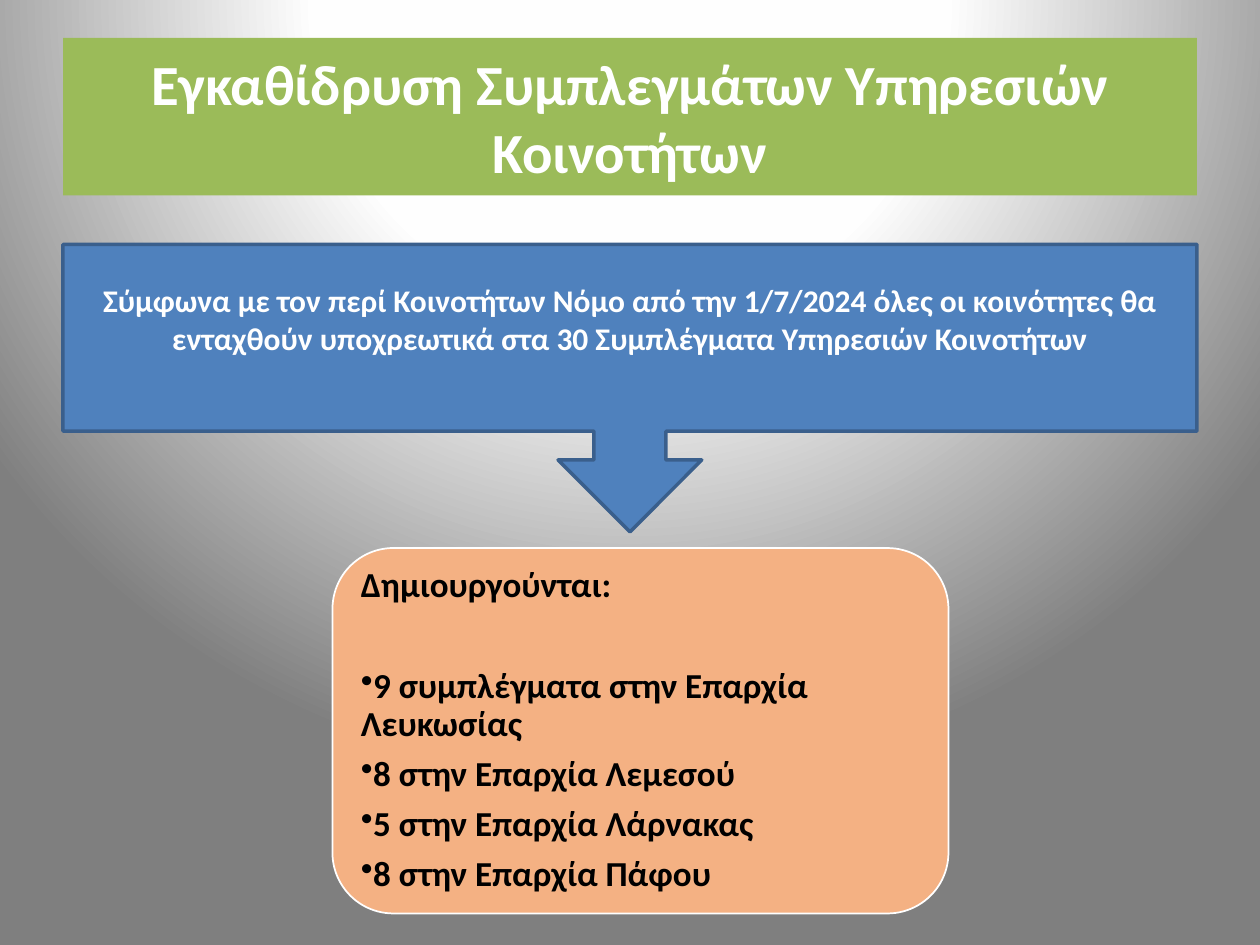
from dataclasses import dataclass

import lxml.etree
import pptx
import pptx.dml.color
import pptx.enum.shapes
import pptx.enum.text
import pptx.oxml
import pptx.oxml.ns
import pptx.util

Pt = pptx.util.Pt
Preset = pptx.enum.shapes.MSO_SHAPE
Align = pptx.enum.text.PP_ALIGN
qn = pptx.oxml.ns.qn

WHITE, BLACK = "FFFFFF", "000000"
GREEN, BLUE, DARK_BLUE, PEACH = "9BBB59", "4F81BD", "3A5F8C", "F4B183"
BACKDROP_STOPS = ((0, WHITE), (40, "FEFEFE"), (100, "7F7F7F"))


@dataclass(frozen=True)
class Panel:
    preset: Preset
    left: float
    top: float
    width: float
    height: float
    fill: str
    line: str
    line_width: float


NOTICE = Panel(Preset.DOWN_ARROW_CALLOUT, 36, 139.7, 648, 164.2, BLUE, DARK_BLUE, 2)
CLUSTERS = Panel(Preset.ROUNDED_RECTANGLE, 190, 313.2, 352, 208.8, PEACH, WHITE, 1)

DISTRICTS = (
    "9 συμπλέγματα στην Επαρχία Λευκωσίας",
    "8 στην Επαρχία Λεμεσού",
    "5 στην Επαρχία Λάρνακας",
    "8 στην Επαρχία Πάφου",
)


def rgb(value: str) -> pptx.dml.color.RGBColor:
    return pptx.dml.color.RGBColor.from_string(value)


def paint_backdrop(slide) -> None:
    """Fill the background with a circular gradient centred above the slide."""
    slide.background.fill.solid()
    solid = slide.element.find(".//" + qn("p:bgPr")).find(qn("a:solidFill"))
    stops = "".join(
        f'<a:gs pos="{percent * 1000}"><a:srgbClr val="{color}"/></a:gs>'
        for percent, color in BACKDROP_STOPS
    )
    gradient = pptx.oxml.parse_xml(
        f'<a:gradFill {pptx.oxml.ns.nsdecls("a")} rotWithShape="1">'
        f'<a:gsLst>{stops}</a:gsLst><a:path path="circle">'
        '<a:fillToRect l="50000" t="-80000" r="50000" b="180000"/>'
        "</a:path></a:gradFill>"
    )
    solid.getparent().replace(solid, gradient)


def add_panel(slide, panel: Panel):
    shape = slide.shapes.add_shape(
        panel.preset, Pt(panel.left), Pt(panel.top), Pt(panel.width), Pt(panel.height)
    )
    shape.shadow.inherit = False
    shape.fill.solid()
    shape.fill.fore_color.rgb = rgb(panel.fill)
    shape.line.color.rgb = rgb(panel.line)
    shape.line.width = Pt(panel.line_width)
    shape.text_frame.word_wrap = True
    return shape


def write(paragraph, text: str, *, size: float, color: str, align=Align.CENTER,
          spacing: float = 1.0, after: float = 0, bullet: str = "") -> None:
    paragraph.alignment = align
    paragraph.line_spacing = spacing
    paragraph.space_before = Pt(0)
    paragraph.space_after = Pt(after)
    if bullet:
        properties = paragraph._p.get_or_add_pPr()
        lxml.etree.SubElement(properties, qn("a:buChar"), char=bullet)
    run = paragraph.add_run()
    run.text = text
    run.font.name = "Calibri"
    run.font.size = Pt(size)
    run.font.bold = True
    run.font.color.rgb = rgb(color)


def add_title(slide) -> None:
    title = slide.shapes.title
    title.left, title.top, title.width, title.height = Pt(36), Pt(21.6), Pt(648), Pt(90)
    title.fill.solid()
    title.fill.fore_color.rgb = rgb(GREEN)
    title.text_frame.auto_size = pptx.enum.text.MSO_AUTO_SIZE.NONE
    title.text_frame.vertical_anchor = pptx.enum.text.MSO_ANCHOR.MIDDLE
    write(title.text_frame.paragraphs[0],
          "Εγκαθίδρυση Συμπλεγμάτων Υπηρεσιών Κοινοτήτων", size=32.4, color=WHITE)


def add_clusters(slide) -> None:
    frame = add_panel(slide, CLUSTERS).text_frame
    frame.margin_left = frame.margin_right = Pt(6)
    frame.margin_top = frame.margin_bottom = Pt(6)
    style = dict(size=20, color=BLACK, align=Align.LEFT, spacing=0.9)
    write(frame.paragraphs[0], "Δημιουργούνται:", after=36, **style)
    for district in DISTRICTS:
        write(frame.add_paragraph(), district, after=7, bullet="•", **style)


def add_notice(slide) -> None:
    frame = add_panel(slide, NOTICE).text_frame
    frame.margin_bottom = Pt(25.6)
    write(frame.paragraphs[0],
          "Σύμφωνα με τον περί Κοινοτήτων Νόμο από την 1/7/2024 όλες οι κοινότητες θα "
          "ενταχθούν υποχρεωτικά στα 30 Συμπλέγματα Υπηρεσιών Κοινοτήτων",
          size=18, color=WHITE)


def main() -> None:
    deck = pptx.Presentation()
    deck.slide_width, deck.slide_height = Pt(720), Pt(540)
    slide = deck.slides.add_slide(deck.slide_layouts[5])
    paint_backdrop(slide)
    add_title(slide)
    add_clusters(slide)
    add_notice(slide)
    deck.save("out.pptx")


if __name__ == "__main__":
    main()
